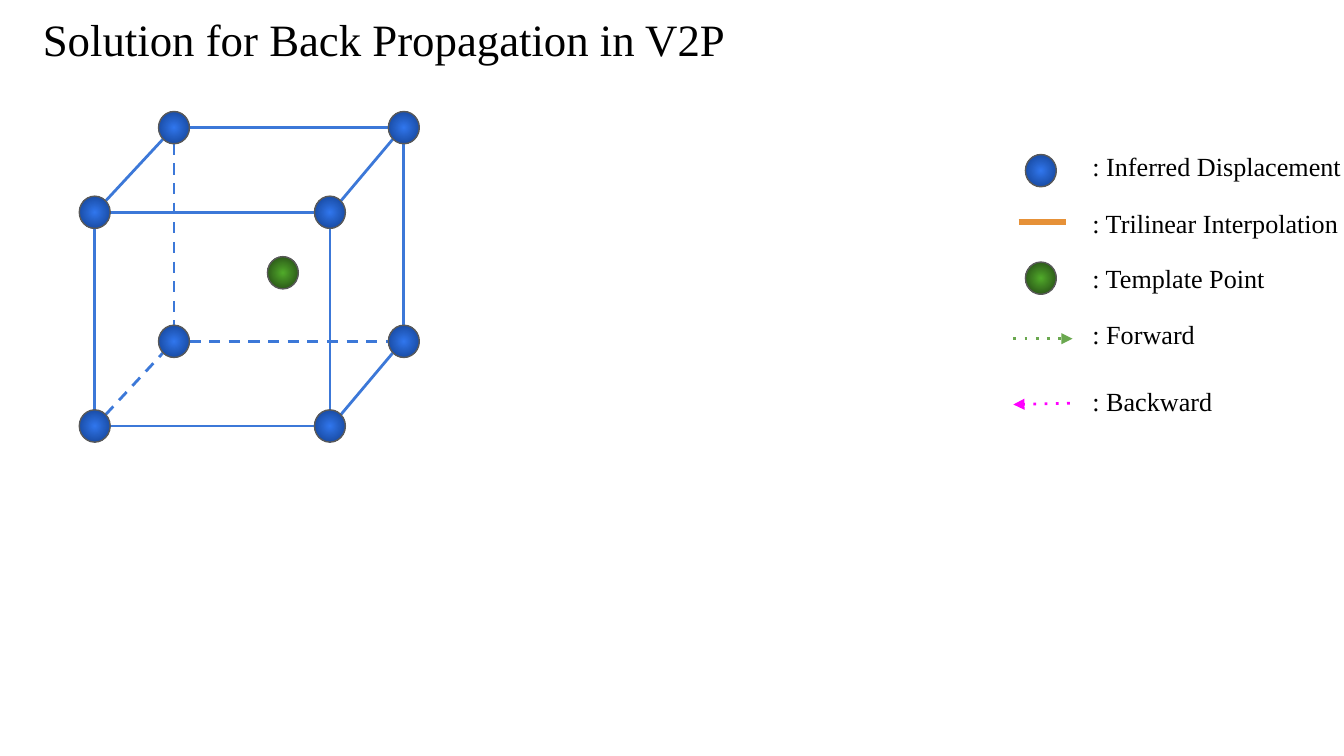
from dataclasses import dataclass
from math import sqrt

from lxml import etree
from pptx import Presentation
from pptx.dml.color import RGBColor
from pptx.enum.shapes import MSO_CONNECTOR, MSO_SHAPE
from pptx.oxml import parse_xml
from pptx.oxml.ns import nsdecls, qn
from pptx.util import Inches, Pt

OVAL = MSO_SHAPE.OVAL
STRAIGHT = MSO_CONNECTOR.STRAIGHT


@dataclass(frozen=True)
class Theme:
    font: str = "Times New Roman"
    title_size: int = 24
    legend_size: int = 14
    text: str = "000000"
    outline: str = "595959"
    displacement: tuple = ("3177EE", "113D8A")
    template: tuple = ("51AB2A", "203E13")
    edge: str = "3C78D8"
    interpolation: str = "E69138"
    forward: str = "6AA84F"
    backward: str = "FF00FF"


THEME = Theme()
POINT_W, POINT_H = 0.23, 0.24

# Left and top of the ball at each corner of the cube
CORNERS = {
    face + level + side: (x, y + drop)
    for face, y, sides in (
        ("front ", 1.46, {"left": 0.59, "right": 2.34}),
        ("back ", 0.83, {"left": 1.18, "right": 2.89}),
    )
    for level, drop in (("top ", 0), ("bottom ", 1.59))
    for side, x in sides.items()
}
HIDDEN_CORNER = "back bottom left"


def add_point(slide, left, top, gradient):
    """Draw a ball with a radial gradient from its middle to its rim."""
    point = slide.shapes.add_shape(
        OVAL, Inches(left), Inches(top), Inches(POINT_W), Inches(POINT_H))
    point.shadow.inherit = False
    point.line.color.rgb = RGBColor.from_string(THEME.outline)
    point.line.width = Pt(0.75)
    inner, outer = gradient
    fill = parse_xml(
        f'<a:gradFill {nsdecls("a")}><a:gsLst>'
        f'<a:gs pos="0"><a:srgbClr val="{inner}"/></a:gs>'
        f'<a:gs pos="100000"><a:srgbClr val="{outer}"/></a:gs></a:gsLst>'
        '<a:path path="circle">'
        '<a:fillToRect l="50000" t="50000" r="50000" b="50000"/>'
        '</a:path></a:gradFill>')
    point._element.spPr.find(qn("a:prstGeom")).addnext(fill)


def add_line(slide, start, end, color, width=1.5, dash=None, arrow=False):
    line = slide.shapes.add_connector(
        STRAIGHT, *(Inches(value) for value in (*start, *end)))
    line.line.color.rgb = RGBColor.from_string(color)
    line.line.width = Pt(width)
    properties = line._element.spPr
    outline = properties.find(qn("a:ln"))
    if dash:
        etree.SubElement(outline, qn("a:prstDash"), val=dash)
    if arrow:
        etree.SubElement(outline, qn("a:tailEnd"), type="triangle")
    etree.SubElement(properties, qn("a:effectLst"))


def add_label(slide, text, left, top, width, height, size):
    box = slide.shapes.add_textbox(
        Inches(left), Inches(top), Inches(width), Inches(height))
    frame = box.text_frame
    frame.word_wrap = True
    frame.margin_left = frame.margin_right = Inches(0.1)
    frame.margin_top = frame.margin_bottom = Inches(0.1)
    frame.text = text
    font = frame.paragraphs[0].runs[0].font
    font.name = THEME.font
    font.size = Pt(size)
    font.color.rgb = RGBColor.from_string(THEME.text)


def rim(corner, other):
    """Return the side or diagonal site of a ball that faces another ball."""
    steps = [(b > a) - (b < a) for a, b in zip(corner, other)]
    scale = 1 / sqrt(sum(map(abs, steps)))
    return (corner[0] + (1 + steps[0] * scale) * POINT_W / 2,
            corner[1] + (1 + steps[1] * scale) * POINT_H / 2)


def add_cube(slide):
    names = list(CORNERS)
    for index, first in enumerate(names):
        for second in names[index + 1:]:
            differences = sum(
                a != b for a, b in zip(first.split(), second.split()))
            if differences == 1:
                start, end = CORNERS[first], CORNERS[second]
                dash = "dash" if HIDDEN_CORNER in (first, second) else None
                add_line(slide, rim(start, end), rim(end, start),
                         THEME.edge, dash=dash)
    for left, top in CORNERS.values():
        add_point(slide, left, top, THEME.displacement)
    add_point(slide, 1.99, 1.91, THEME.template)


def add_legend(slide):
    add_point(slide, 7.63, 1.15, THEME.displacement)
    add_line(slide, (7.58, 1.65), (7.93, 1.65), THEME.interpolation, width=3)
    add_point(slide, 7.63, 1.95, THEME.template)
    add_line(slide, (7.54, 2.52), (7.98, 2.52), THEME.forward,
             dash="dot", arrow=True)
    add_line(slide, (7.96, 3.0), (7.54, 3.01), THEME.backward,
             dash="dot", arrow=True)
    for meaning, top in (
        ("Inferred Displacement", 1.02),
        ("Trilinear Interpolation", 1.44),
        ("Template Point", 1.85),
        ("Forward", 2.27),
        ("Backward", 2.77),
    ):
        add_label(slide, f": {meaning}", 8.03, top, 2.07, 0.39,
                  THEME.legend_size)


def main():
    presentation = Presentation()
    presentation.slide_width = Inches(10)
    presentation.slide_height = Inches(10 * 9 / 16)
    slide = presentation.slides.add_slide(presentation.slide_layouts[6])
    add_cube(slide)
    add_label(slide, "Solution for Back Propagation in V2P",
              0.22, -0.01, 6.69, 0.35, THEME.title_size)
    add_legend(slide)
    presentation.save("out.pptx")


if __name__ == "__main__":
    main()
